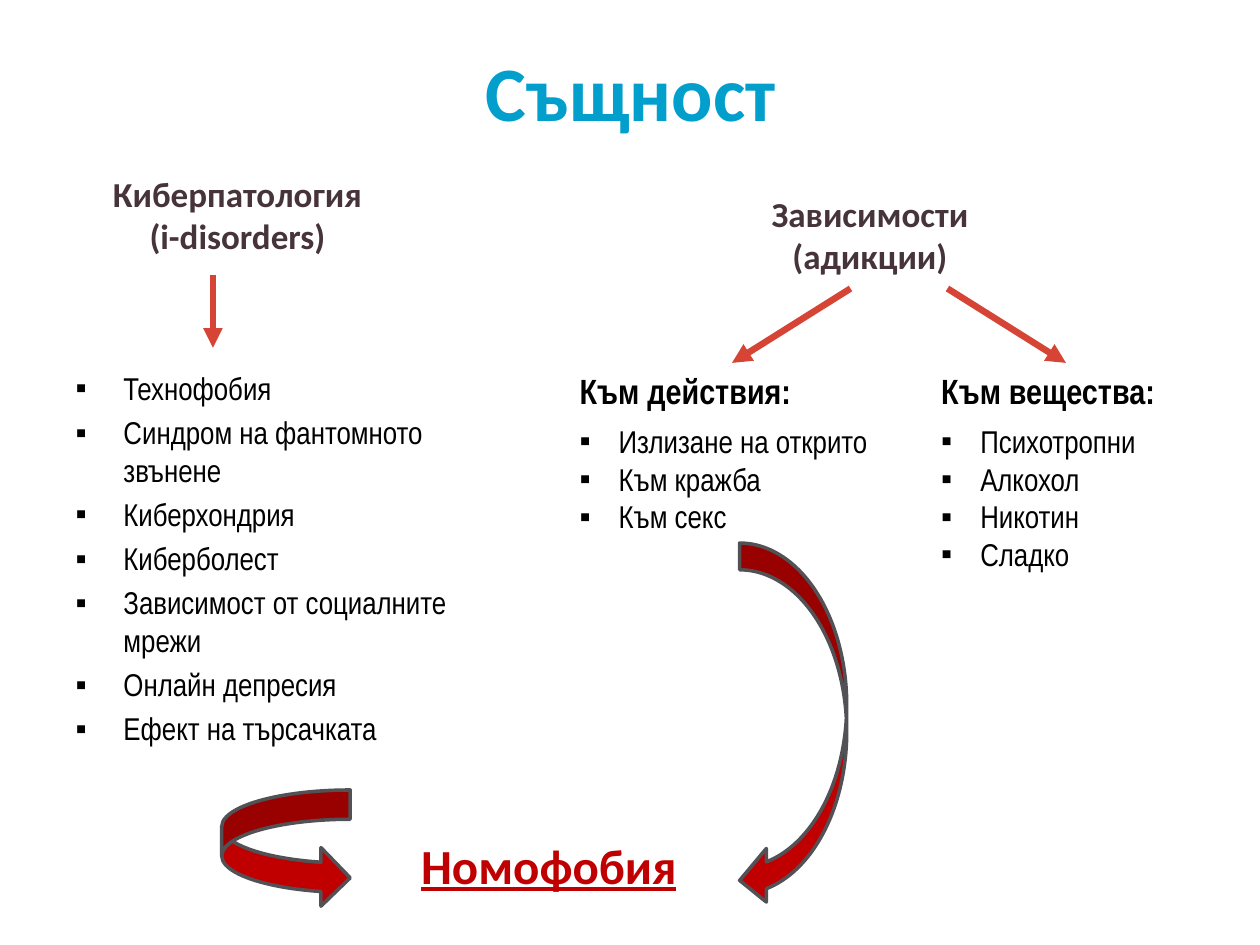
"""Build the slide on the nature of nomophobia, its disorders and its addictions."""
from dataclasses import dataclass

from lxml.etree import SubElement
from pptx import Presentation
from pptx.dml.color import RGBColor
from pptx.enum.shapes import MSO_CONNECTOR as Connector, MSO_SHAPE as Shape
from pptx.enum.text import MSO_ANCHOR as Anchor, MSO_AUTO_SIZE as AutoSize, PP_ALIGN as Align
from pptx.oxml.ns import qn
from pptx.util import Inches, Pt


@dataclass(frozen=True)
class Theme:
    heading_font: str = "Calibri"
    list_font: str = "Arial Narrow"
    title: RGBColor = RGBColor(0x02, 0x9F, 0xCD)
    branch: RGBColor = RGBColor(0x46, 0x34, 0x3A)
    text: RGBColor = RGBColor(0, 0, 0)
    accent: RGBColor = RGBColor(0xC0, 0, 0)
    connector: RGBColor = RGBColor(0xD6, 0x44, 0x35)
    outline: RGBColor = RGBColor(0x52, 0x52, 0x56)
    title_size: int = 44
    result_size: int = 28
    heading_size: int = 20
    list_size: int = 18


theme = Theme()


def place(shape, left, top, width, height):
    shape.left, shape.top = Inches(left), Inches(top)
    shape.width, shape.height = Inches(width), Inches(height)
    frame = shape.text_frame
    frame.word_wrap = True
    frame.auto_size = AutoSize.NONE
    frame.vertical_anchor = Anchor.TOP
    return frame


def write(frame, text, *, font, size, color, bold=False, underline=False,
          align=Align.LEFT, indent=0, before=0, after=0):
    paragraph = frame.paragraphs[0] if not frame.text else frame.add_paragraph()
    paragraph.text = text
    paragraph.alignment = align
    paragraph.space_before, paragraph.space_after = Pt(before), Pt(after)
    properties = paragraph._p.get_or_add_pPr()
    properties.set("marL", str(Inches(indent)))
    properties.set("indent", str(-Inches(indent)))
    if indent:
        SubElement(properties, qn("a:buChar"), char="▪")
    else:
        SubElement(properties, qn("a:buNone"))
    for run in paragraph.runs:
        run.font.name, run.font.size = font, Pt(size)
        run.font.color.rgb = color
        run.font.bold, run.font.underline = bold, underline


presentation = Presentation()
presentation.slide_width, presentation.slide_height = Inches(10), Inches(7.5)
slide = presentation.slides.add_slide(presentation.slide_layouts.get_by_name("Comparison"))
title, disorders, actions, substances, spare = slide.placeholders
spare.element.getparent().remove(spare.element)

heading = {"font": theme.heading_font, "bold": True, "align": Align.CENTER}
item = {"font": theme.list_font, "size": theme.list_size, "color": theme.text}

write(place(title, 2.4, 0.3, 5.21, 0.84), "Същност",
      size=theme.title_size, color=theme.title, **heading)

frame = place(disorders, 0.5, 2.88, 3.21, 3.19)
for index, text in enumerate([
    "Технофобия", "Синдром на фантомното звънене", "Киберхондрия", "Киберболест",
    "Зависимост от социалните мрежи", "Онлайн депресия", "Ефект на търсачката",
]):
    write(frame, text, indent=0.38, before=3.6 if index else 0, **item)

for shape, left, width, height, text, entries in [
    (actions, 4.5, 2.61, 1.43, "Към действия:",
     ["Излизане на открито", "Към кражба", "Към секс"]),
    (substances, 7.37, 1.95, 1.73, "Към вещества:",
     ["Психотропни", "Алкохол", "Никотин", "Сладко"]),
]:
    frame = place(shape, left, 2.88, width, height)
    write(frame, text, font=theme.list_font, size=theme.heading_size,
          color=theme.text, bold=True, after=6)
    for entry in entries:
        write(frame, entry, indent=0.31, **item)

for text, box, size, color, underline in [
    ("Номофобия", (2.4, 6.58, 3.91, 0.57), theme.result_size, theme.accent, True),
    ("Киберпатология\n(i-disorders)", (0.28, 1.32, 3.21, 0.77),
     theme.heading_size, theme.branch, False),
    ("Зависимости\n(адикции)", (5.3, 1.48, 3.21, 0.77),
     theme.heading_size, theme.branch, False),
]:
    frame = place(slide.shapes.add_textbox(0, 0, 0, 0), *box)
    write(frame, text, size=size, color=color, underline=underline, **heading)

for ends in [(6.75, 2.29, 5.81, 2.88), (7.52, 2.29, 8.46, 2.88), (1.69, 2.18, 1.69, 2.76)]:
    connector = slide.shapes.add_connector(Connector.STRAIGHT, *map(Inches, ends))
    connector.line.color.rgb = theme.connector
    connector.line.width = Pt(3.75)
    properties = connector.element.spPr
    SubElement(properties.find(qn("a:ln")), qn("a:tailEnd"), type="triangle")
    SubElement(properties, qn("a:effectLst"))

for box, flipped in [((5.87, 4.31, 0.85, 2.89), False), ((1.76, 6.27, 1.02, 0.93), True)]:
    arrow = slide.shapes.add_shape(Shape.CURVED_LEFT_ARROW, *map(Inches, box))
    arrow.shadow.inherit = False
    arrow.fill.solid()
    arrow.fill.fore_color.rgb = theme.accent
    arrow.line.color.rgb = theme.outline
    arrow.line.width = Pt(2)
    if flipped:
        arrow.element.spPr.find(qn("a:xfrm")).set("flipH", "1")

presentation.save("out.pptx")
